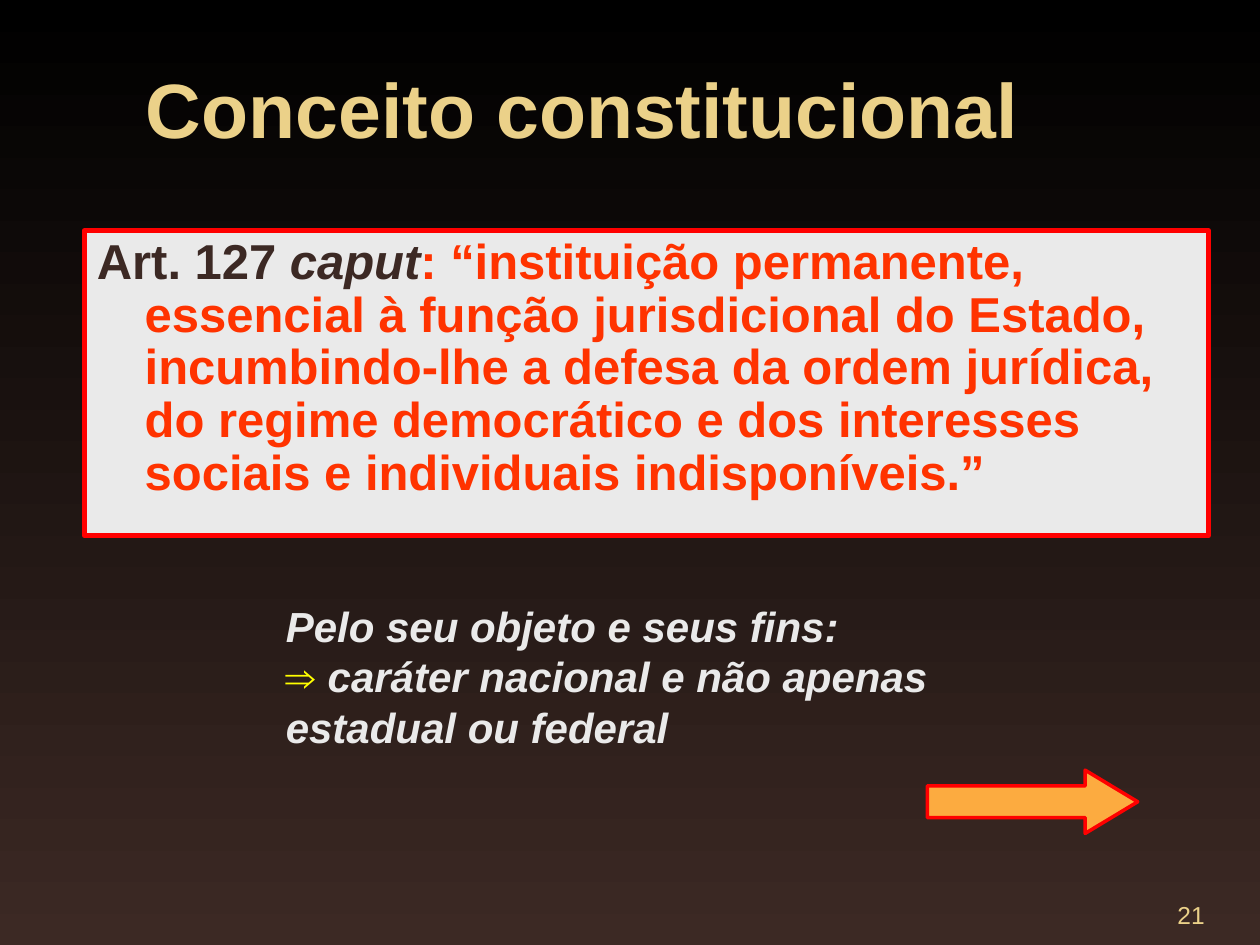
from pptx import Presentation
from pptx.dml.color import RGBColor
from pptx.enum.shapes import MSO_SHAPE
from pptx.enum.text import MSO_ANCHOR, PP_ALIGN
from pptx.util import Inches, Pt

RECT, ARROW = MSO_SHAPE.RECTANGLE, MSO_SHAPE.RIGHT_ARROW
TOP, BOTTOM = MSO_ANCHOR.TOP, MSO_ANCHOR.BOTTOM
LEFT, RIGHT = PP_ALIGN.LEFT, PP_ALIGN.RIGHT

W, H = 10, 7.5
FONT = "Arial"
HANG = 0.38
COLORS = {
    "black": "000000", "brown": "3C2924", "gold": "EBD189", "pale": "EAEAEA",
    "red": "FF0000", "scarlet": "FF3300", "yellow": "FFFF00", "orange": "FCAB40",
}

NUMBER = [[("21", "gold", False)]]
TITLE = [[("Conceito constitucional", "gold", False)]]
ARTICLE = [[
    ("Art. 127 ", "brown", False),
    ("caput", "brown", True),
    (": “instituição permanente, essencial à função jurisdicional do Estado, "
     "incumbindo-lhe a defesa da ordem jurídica, do regime democrático e dos "
     "interesses sociais e individuais indisponíveis.”", "scarlet", False),
]]
SCOPE = [
    [("Pelo seu objeto e seus fins:", "pale", True)],
    [("⇒ ", "yellow", False),
     ("caráter nacional e não apenas estadual ou federal", "pale", True)],
]


def rgb(name):
    return RGBColor.from_string(COLORS[name])


def place(x, y, w, h):
    return [Inches(v) for v in (x * W, y * H, w * W, h * H)]


def add_shape(s, kind, box, fill, line_width):
    sp = s.shapes.add_shape(kind, *place(*box))
    sp.shadow.inherit = False
    sp.fill.solid()
    sp.fill.fore_color.rgb = rgb(fill)
    sp.line.color.rgb = rgb("red")
    sp.line.width = Pt(line_width)
    return sp


def write(sp, paragraphs, size, bold=True, anchor=TOP, align=LEFT):
    tf = sp.text_frame
    tf.word_wrap = True
    tf.vertical_anchor = anchor
    for i, runs in enumerate(paragraphs):
        p = tf.paragraphs[0] if i == 0 else tf.add_paragraph()
        p.alignment = align
        p.font.name, p.font.size, p.font.bold = FONT, Pt(size), bold
        for text, color, italic in runs:
            r = p.add_run()
            r.text = text
            r.font.color.rgb = rgb(color)
            r.font.italic = italic
    return tf


def main():
    prs = Presentation()
    prs.slide_width, prs.slide_height = Inches(W), Inches(H)
    s = prs.slides.add_slide(prs.slide_layouts[6])

    bg = s.background.fill
    bg.gradient()
    bg.gradient_angle = 270
    for stop, color, position in zip(bg.gradient_stops, ("black", "brown"), (0, 1)):
        stop.color.rgb = rgb(color)
        stop.position = position

    number = s.shapes.add_textbox(*place(0.758, 0.923, 0.208, 0.067))
    write(number, NUMBER, 14, bold=False, anchor=BOTTOM, align=RIGHT)

    title = s.shapes.add_textbox(*place(0.106, 0.059, 0.85, 0.11))
    write(title, TITLE, 44, anchor=BOTTOM)

    article = add_shape(s, RECT, (0.067, 0.244, 0.892, 0.323), "pale", 3)
    p = write(article, ARTICLE, 28).paragraphs[0]
    p.line_spacing = 0.9
    pPr = p._p.get_or_add_pPr()
    pPr.set("marL", str(Inches(HANG)))
    pPr.set("indent", str(-Inches(HANG)))

    scope = s.shapes.add_textbox(*place(0.217, 0.629, 0.583, 0.175))
    write(scope, SCOPE, 24)

    arrow = add_shape(s, ARROW, (0.736, 0.815, 0.167, 0.067), "orange", 2)
    arrow.adjustments[0], arrow.adjustments[1] = 0.5, 0.83

    prs.save("out.pptx")


if __name__ == "__main__":
    main()
